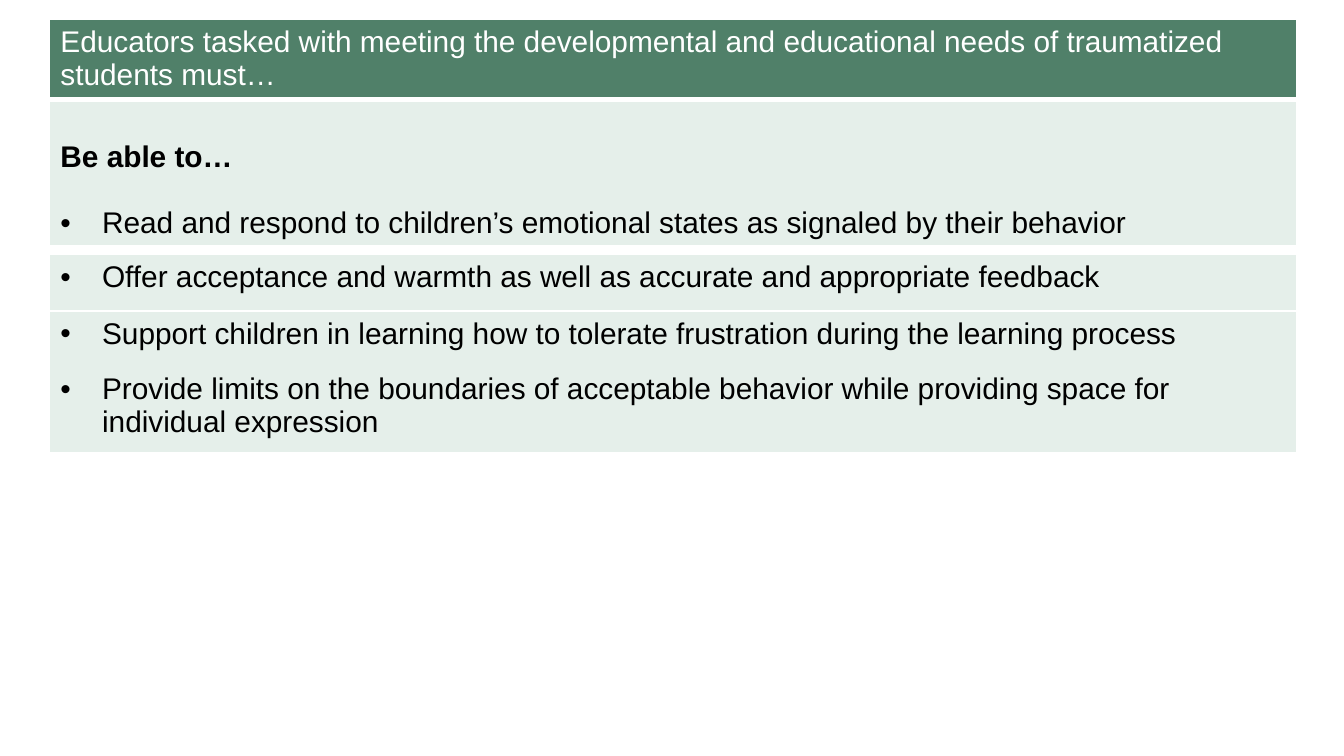
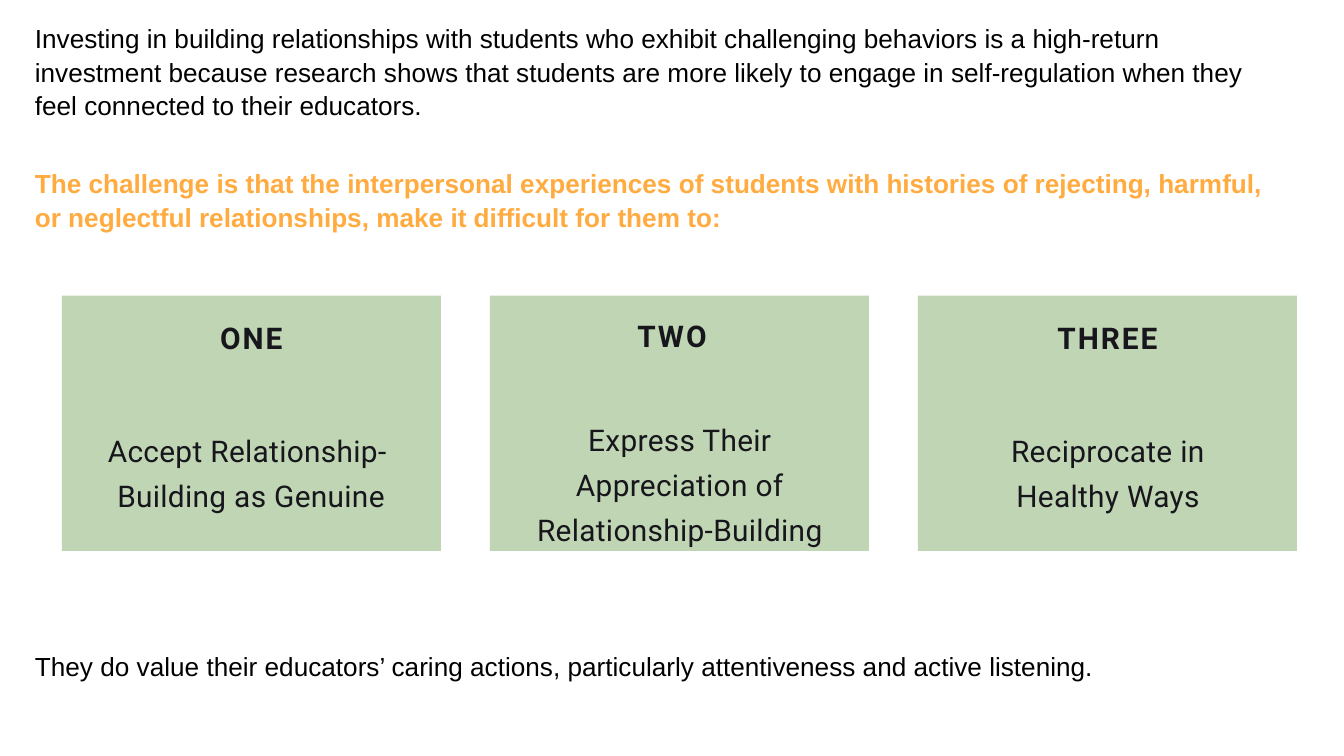
import pptx
import pptx.dml.color
import pptx.enum.shapes
import pptx.enum.text
import pptx.oxml
import pptx.oxml.ns
import pptx.util

Inches = pptx.util.Inches
Pt = pptx.util.Pt
RGBColor = pptx.dml.color.RGBColor
PP_ALIGN = pptx.enum.text.PP_ALIGN

BLACK = RGBColor(0x00, 0x00, 0x00)
WHITE = RGBColor(0xFF, 0xFF, 0xFF)
DEEP_GREEN = RGBColor(0x50, 0x80, 0x69)
PALE_GREEN = RGBColor(0xE5, 0xEF, 0xEA)
LEAF_GREEN = RGBColor(0x2E, 0x76, 0x04)
ORANGE = RGBColor(0xFF, 0xAB, 0x40)
INK = RGBColor(0x17, 0x16, 0x1C)
NO_TABLE_STYLE = "{2D5ABB26-0587-4C30-8999-92F81FD0307C}"
NAMESPACE = pptx.oxml.ns.nsdecls("a")


def write(frame, text, size=16, font="Arial", color=BLACK, bold=False, align=PP_ALIGN.LEFT,
          line=None, tracking=0, bullet=False, before=0, append=False):
    """Fill a text frame, one paragraph per line of text; append keeps what it holds."""
    for number, words in enumerate(text.split("\n")):
        paragraph = frame.add_paragraph() if append or number else frame.paragraphs[0]
        if bullet:
            properties = paragraph._p.get_or_add_pPr()
            properties.set("marL", str(Inches(0.31)))
            properties.set("indent", str(-Inches(0.31)))
            for xml in (f'<a:buClr {NAMESPACE}><a:srgbClr val="{BLACK}"/></a:buClr>',
                        f'<a:buFont {NAMESPACE} typeface="{font}"/>',
                        f'<a:buChar {NAMESPACE} char="•"/>'):
                properties.append(pptx.oxml.parse_xml(xml))
        paragraph.alignment = align
        if line:
            paragraph.line_spacing = Pt(line)
        if before:
            paragraph.space_before = Pt(before)
        run = paragraph.add_run()
        run.text = words
        run.font.name = font
        run.font.size = Pt(size)
        run.font.bold = bold
        run.font.color.rgb = color
        if tracking:
            run._r.get_or_add_rPr().set("spc", str(round(tracking * 100)))


def add_panel(slide, top, height, fill, inset_top=0.04):
    """Add a full-width one-cell table and return the cell's text frame."""
    table = slide.shapes.add_table(1, 1, Inches(0.37), Inches(top), Inches(9.27), Inches(height)).table
    table.first_row = table.horz_banding = False
    table._tbl.tblPr.find(pptx.oxml.ns.qn("a:tableStyleId")).text = NO_TABLE_STYLE
    cell = table.cell(0, 0)
    cell.fill.solid()
    cell.fill.fore_color.rgb = fill
    cell.margin_left = cell.margin_right = Inches(0.08)
    cell.margin_top, cell.margin_bottom = Inches(inset_top), Inches(0.04)
    return cell.text_frame


deck = pptx.Presentation()
deck.slide_width = Inches(10)
deck.slide_height = deck.slide_width * 9 // 16
blank = deck.slide_layouts[6]

# Slide 1: what educators must be able to do
abilities = deck.slides.add_slide(blank)
opening = add_panel(abilities, 0.76, 1.06, PALE_GREEN, inset_top=0.29)
write(opening, "Be able to…", bold=True)
write(opening, "Read and respond to children’s emotional states as signaled by their behavior",
      bullet=True, before=17.5, append=True)

write(add_panel(abilities, 0.15, 0.57, DEEP_GREEN),
      "Educators tasked with meeting the developmental and educational needs of traumatized students must…",
      color=WHITE)

for top, height, ability in (
    (1.9, 0.41, "Offer acceptance and warmth as well as accurate and appropriate feedback"),
    (2.73, 0.63, "Provide limits on the boundaries of acceptable behavior while providing space for "
                 "individual expression"),
    (2.32, 0.41, "Support children in learning how to tolerate frustration during the learning process"),
):
    write(add_panel(abilities, top, height, PALE_GREEN), ability, bullet=True)

# Slide 2: the challenge of building relationships
challenge = deck.slides.add_slide(blank)
for column in range(3):
    card = challenge.shapes.add_shape(
        pptx.enum.shapes.MSO_SHAPE.RECTANGLE,
        Inches(0.46 + column * (6.83 - 0.46) / 2), Inches(2.2), Inches(2.82), Inches(1.9))
    card.shadow.inherit = False
    card.line.fill.background()
    card.fill.solid()
    card.fill.fore_color.rgb = LEAF_GREEN
    tint = card.fill._xPr.find(".//" + pptx.oxml.ns.qn("a:srgbClr"))
    tint.append(pptx.oxml.parse_xml(f'<a:alpha {NAMESPACE} val="30000"/>'))

statement = dict(size=14, line=18)
label = dict(font="Roboto", color=INK, align=PP_ALIGN.CENTER, bold=True, line=22.5, tracking=1.1)
difficulty = dict(font="Roboto", color=INK, align=PP_ALIGN.CENTER, line=24.1, tracking=0.2)

for left, top, width, height, text, style in (
    (0.71, 2.33, 2.32, 0.28, "ONE", label),
    (0.71, 3.15, 2.32, 0.64, "Accept Relationship- \nBuilding as Genuine", difficulty),
    (3.84, 2.32, 2.32, 0.28, "TWO", label),
    (3.9, 3.07, 2.32, 0.98, "Express Their Appreciation of Relationship-Building", difficulty),
    (7.08, 2.33, 2.32, 0.28, "THREE", label),
    (7.14, 3.15, 2.21, 0.64, "Reciprocate in Healthy Ways", difficulty),
    (0.26, 0.15, 9.2, 0.74,
     "Investing in building relationships with students who exhibit challenging behaviors is a "
     "high-return investment because research shows that students are more likely to engage in "
     "self-regulation when they feel connected to their educators.", statement),
    (0.26, 4.82, 9.58, 0.23,
     "They do value their educators’ caring actions, particularly attentiveness and active listening.",
     statement),
    (0.26, 1.23, 9.2, 0.49,
     "The challenge is that the interpersonal experiences of students with histories of rejecting, "
     "harmful, or neglectful relationships, make it difficult for them to:",
     dict(statement, color=ORANGE, bold=True)),
):
    frame = challenge.shapes.add_textbox(Inches(left), Inches(top), Inches(width), Inches(height)).text_frame
    frame.word_wrap = True
    frame.auto_size = pptx.enum.text.MSO_AUTO_SIZE.SHAPE_TO_FIT_TEXT
    frame.margin_left = frame.margin_right = frame.margin_top = frame.margin_bottom = 0
    write(frame, text, **style)

deck.save("out.pptx")
